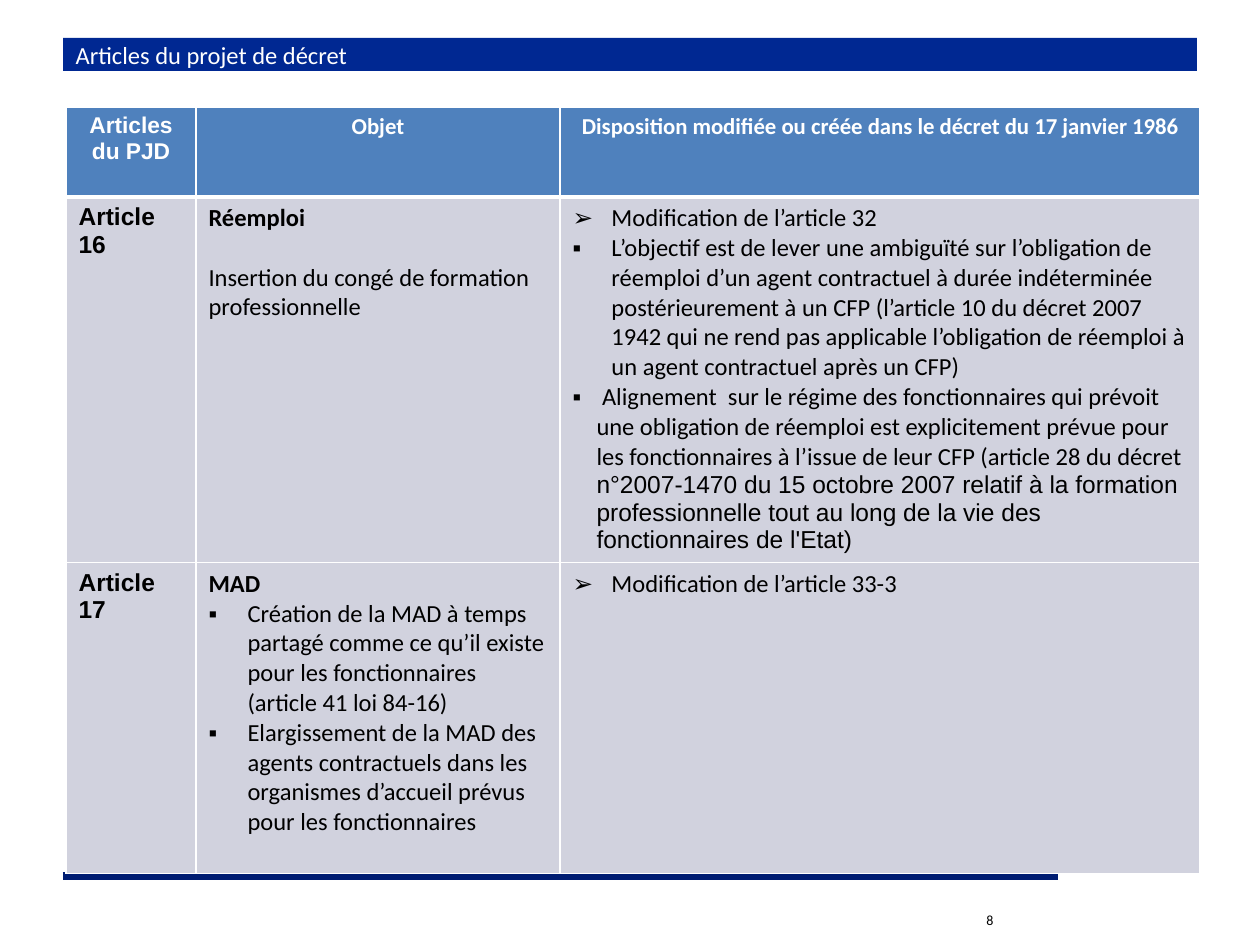
from lxml.etree import SubElement
from pptx import Presentation
from pptx.dml.color import RGBColor
from pptx.enum.shapes import MSO_CONNECTOR
from pptx.enum.text import MSO_ANCHOR, MSO_AUTO_SIZE, PP_ALIGN
from pptx.oxml.ns import qn
from pptx.util import Emu, Pt

PX = 914400 // 126
COLORS = {"title": "002892", "rule": "001D72", "header": "4F81BD",
          "body": "D1D2DE", "white": "FFFFFF", "black": "000000"}


def px(length):
    return Emu(length * PX)


def rgb(name):
    return RGBColor.from_string(COLORS[name])


def item(text, bullet=None, indent=39, **style):
    """Describe one paragraph; text is a string or a list of (text, font) runs."""
    return {"text": text, "bullet": bullet, "indent": indent, **style}


class SlideBuilder:
    body_font = "Calibri"
    label_font = "Arial"

    def __init__(self, slide):
        self.slide = slide

    def style(self, paragraph, size, color="black", font=body_font, bold=False):
        paragraph.font.name = font
        paragraph.font.size = Pt(size)
        paragraph.font.bold = bold
        paragraph.font.color.rgb = rgb(color)

    def title(self, text, left, top, width, height):
        shape = self.slide.shapes.title
        shape.left, shape.top, shape.width, shape.height = map(px, (left, top, width, height))
        shape.fill.solid()
        shape.fill.fore_color.rgb = rgb("title")
        frame = shape.text_frame
        frame.text = text
        frame.auto_size = MSO_AUTO_SIZE.NONE
        frame.vertical_anchor = MSO_ANCHOR.MIDDLE
        paragraph = frame.paragraphs[0]
        paragraph.alignment = PP_ALIGN.LEFT
        self.style(paragraph, 14, "white")

    def rule(self, left, right, y, weight):
        line = self.slide.shapes.add_connector(
            MSO_CONNECTOR.STRAIGHT, px(left), px(y), px(right), px(y))
        line.line.color.rgb = rgb("rule")
        line.line.width = Pt(weight)
        SubElement(line._element.spPr, qn("a:effectLst"))

    def text(self, text, left, top, width, height, size):
        box = self.slide.shapes.add_textbox(px(left), px(top), px(width), px(height))
        box.text_frame.word_wrap = True
        box.text_frame.text = text
        self.style(box.text_frame.paragraphs[0], size)

    def bullet(self, paragraph, character, indent):
        properties = paragraph._p.get_or_add_pPr()
        properties.set("marL", str(px(indent)))
        properties.set("indent", str(-px(indent)))
        SubElement(properties, qn("a:buFont"), typeface=self.label_font)
        SubElement(properties, qn("a:buChar"), char=character)

    def borders(self, cell, bottom=1):
        properties = cell._tc.get_or_add_tcPr()
        for side, weight in (("L", 1), ("R", 1), ("T", 1), ("B", bottom)):
            line = SubElement(properties, qn(f"a:ln{side}"), w=str(Pt(weight)))
            fill = SubElement(line, qn("a:solidFill"))
            SubElement(fill, qn("a:srgbClr"), val=COLORS["white"])

    def cell(self, cell, items, is_header, is_label):
        self.borders(cell, 3 if is_header else 1)
        cell.fill.solid()
        cell.fill.fore_color.rgb = rgb("header" if is_header else "body")
        frame = cell.text_frame
        for index, entry in enumerate(items):
            paragraph = frame.add_paragraph() if index else frame.paragraphs[0]
            if entry.get("before"):
                paragraph.space_before = Pt(entry["before"])
            if is_header:
                paragraph.alignment = PP_ALIGN.CENTER
            if entry["bullet"]:
                self.bullet(paragraph, entry["bullet"], entry["indent"])
            self.style(paragraph, 13 if is_header else 14,
                       "white" if is_header else "black",
                       self.label_font if is_label else self.body_font,
                       is_header or is_label or entry.get("bold", False))
            runs = entry["text"]
            for text, font in [(runs, None)] if isinstance(runs, str) else runs:
                run = paragraph.add_run()
                run.text = text
                if font:
                    run.font.name = font

    def table(self, rows, left, top, widths, heights):
        table = self.slide.shapes.add_table(
            len(rows), len(widths), px(left), px(top),
            px(sum(widths)), px(sum(heights))).table
        for column, width in zip(table.columns, widths):
            column.width = px(width)
        for row, height in zip(table.rows, heights):
            row.height = px(height)
        for row_index, row in enumerate(rows):
            for column_index, items in enumerate(row):
                self.cell(table.cell(row_index, column_index), items,
                          row_index == 0, column_index == 0)


ARROW, SQUARE = "➢", "▪"
ROWS = [
    [[item("Articles du PJD")], [item("Objet")],
     [item("Disposition modifiée ou créée dans le décret du 17 janvier 1986")]],
    [[item("Article 16")],
     [item("Réemploi", bold=True),
      item("Insertion du congé de formation professionnelle", before=17)],
     [item("Modification de l’article 32", ARROW),
      item("L’objectif est de lever une ambiguïté sur l’obligation de réemploi d’un "
           "agent contractuel à durée indéterminée postérieurement à un CFP (l’article "
           "10 du décret 2007 1942 qui ne rend pas applicable l’obligation de réemploi "
           "à un agent contractuel après un CFP)", SQUARE),
      item([(" Alignement  sur le régime des fonctionnaires qui prévoit une obligation "
             "de réemploi est explicitement prévue pour les fonctionnaires à l’issue de "
             "leur CFP (article 28 du décret ", None),
            ("n°2007-1470 du 15 octobre 2007 relatif à la formation professionnelle "
             "tout au long de la vie des fonctionnaires de l'Etat)",
             SlideBuilder.label_font)], SQUARE, 24)]],
    [[item("Article 17")],
     [item("MAD", bold=True),
      item("Création de la MAD à temps partagé comme ce qu’il existe pour les "
           "fonctionnaires (article 41 loi 84-16)", SQUARE),
      item("Elargissement de la MAD des agents contractuels dans les organismes "
           "d’accueil prévus pour les fonctionnaires", SQUARE)],
     [item("Modification de l’article 33-3", ARROW)]],
]


def main():
    presentation = Presentation()
    presentation.slide_width, presentation.slide_height = px(1260), px(945)
    builder = SlideBuilder(presentation.slides.add_slide(presentation.slide_layouts[5]))
    builder.rule(63, 1058, 876, 5)
    builder.text("8", 974, 905, 285, 63, 8)
    builder.title("Articles du projet de décret", 63, 38, 1134, 33)
    builder.table(ROWS, 66, 107, [130, 364, 640], [90, 364, 311])
    presentation.save("out.pptx")


if __name__ == "__main__":
    main()
